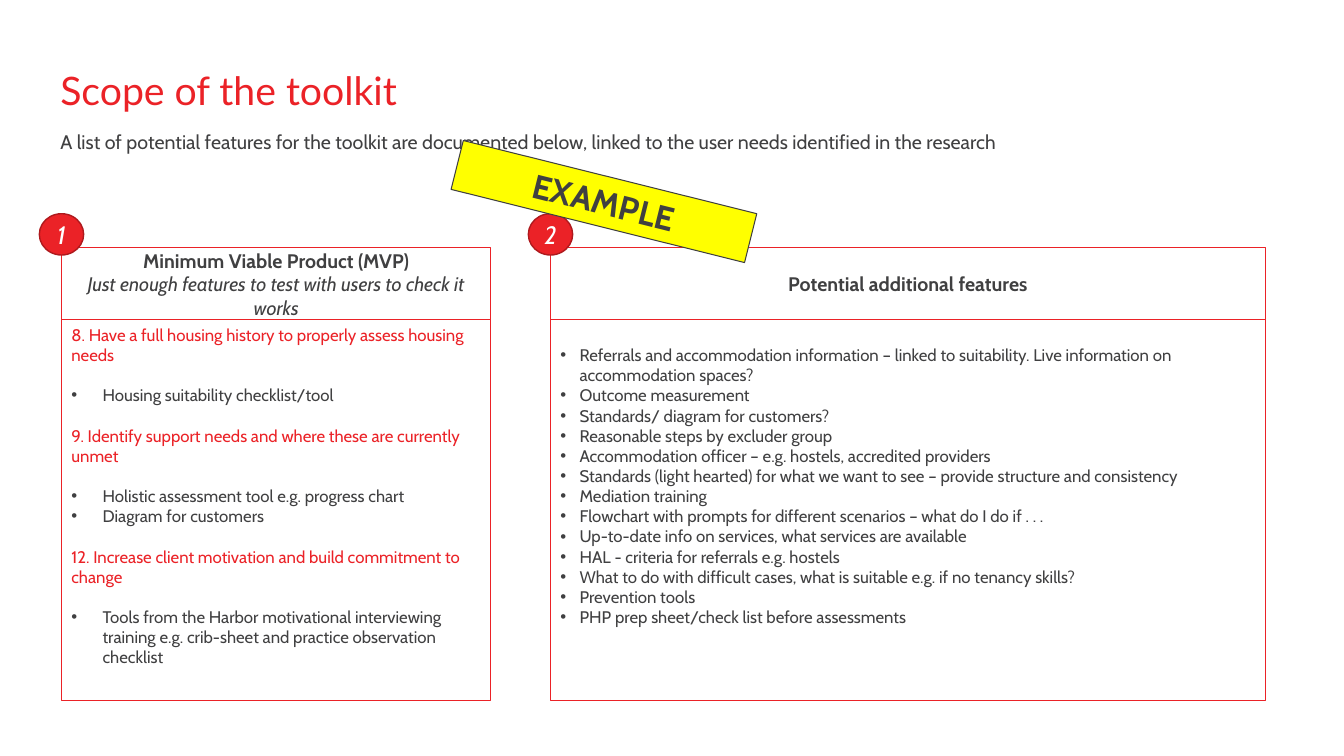
from lxml import etree
from pptx import Presentation
from pptx.dml.color import RGBColor
from pptx.enum import shapes, text
from pptx.oxml.ns import qn
from pptx.util import Inches, Pt

RED, DARK_RED, GREY, WHITE, YELLOW = "EB2227", "AE191D", "404041", "FFFFFF", "FFFF00"
TITLE = "Scope of the toolkit"
SUBTITLE = ("A list of potential features for the toolkit are documented below, "
            "linked to the user needs identified in the research")
STAMP = "EXAMPLE"
NEEDS = [
    ("8. Have a full housing history to properly assess housing needs",
     ["Housing suitability checklist/tool"]),
    ("9. Identify support needs and where these are currently unmet",
     ["Holistic assessment tool e.g. progress chart", "Diagram for customers"]),
    ("12. Increase client motivation and build commitment to change",
     ["Tools from the Harbor motivational interviewing training e.g. crib-sheet "
      "and practice observation checklist"]),
]
EXTRAS = [
    "Referrals and accommodation information – linked to suitability. Live information on accommodation spaces?",
    "Outcome measurement",
    "Standards/ diagram for customers?",
    "Reasonable steps by excluder group",
    "Accommodation officer – e.g. hostels, accredited providers",
    "Standards (light hearted) for what we want to see – provide structure and consistency",
    "Mediation training",
    "Flowchart with prompts for different scenarios – what do I do if . . . ",
    "Up-to-date info on services, what services are available",
    "HAL - criteria for referrals e.g. hostels",
    "What to do with difficult cases, what is suitable e.g. if no tenancy skills?",
    "Prevention tools",
    "PHP prep sheet/check list before assessments",
]
PANELS = [
    {"number": "1", "left": 0.61, "width": 4.26, "indent": 0.31, "groups": NEEDS,
     "heading": "Minimum Viable Product (MVP)",
     "note": "Just enough features to test with users to check it works"},
    {"number": "2", "left": 5.46, "width": 7.09, "indent": 0.19, "groups": [("", EXTRAS)],
     "heading": "Potential additional features", "note": ""},
]
HEAD_TOP, HEAD_HEIGHT, BODY_HEIGHT = 2.46, 0.71, 3.78
BADGE_SIZE = (0.44, 0.41)
BLANK_LINE = 14.4

prs = Presentation()
prs.slide_width, prs.slide_height = Inches(13.33), Inches(7.5)
s = prs.slides.add_slide(prs.slide_layouts[6])


def rgb(value):
    return RGBColor.from_string(value)


def add_run(p, words, size, color=GREY, bold=False, italic=False, font="Cabin"):
    r = p.add_run()
    r.text = words
    r.font.name, r.font.size, r.font.color.rgb = font, Pt(size), rgb(color)
    r.font.bold, r.font.italic = bold, italic


def next_paragraph(tf, align=text.PP_ALIGN.LEFT):
    p = tf.paragraphs[0] if not tf.paragraphs[0].runs else tf.add_paragraph()
    p.alignment = align
    return p


def add_centred(tf, words, size, **style):
    add_run(next_paragraph(tf, text.PP_ALIGN.CENTER), words, size, **style)


def add_bullet(p, indent):
    pPr = p._p.get_or_add_pPr()
    pPr.set("marL", str(Inches(indent)))
    pPr.set("indent", str(-Inches(indent)))
    etree.SubElement(pPr, qn("a:buFont")).set("typeface", "Arial")
    etree.SubElement(pPr, qn("a:buChar")).set("char", "•")


def add_box(kind, left, top, width, height, line, fill=None, weight=0.75):
    sp = s.shapes.add_shape(kind, Inches(left), Inches(top), Inches(width), Inches(height))
    sp.shadow.inherit = False
    sp.line.color.rgb, sp.line.width = rgb(line), Pt(weight)
    if fill:
        sp.fill.solid()
        sp.fill.fore_color.rgb = rgb(fill)
    else:
        sp.fill.background()
    sp.text_frame.word_wrap = True
    sp.text_frame.vertical_anchor = text.MSO_ANCHOR.MIDDLE
    return sp


def add_line_of_text(top, width, height, words, size, color, font):
    tf = s.shapes.add_textbox(Inches(0.5), Inches(top), Inches(width), Inches(height)).text_frame
    tf.word_wrap = True
    p = next_paragraph(tf)
    p.line_spacing = 0.9
    add_run(p, words, size, color, font=font)


def add_groups(tf, groups, indent):
    for g, (need, features) in enumerate(groups):
        if need:
            p = next_paragraph(tf)
            p.space_before = Pt(BLANK_LINE if g else 0)
            add_run(p, need, 12, RED)
        for f, feature in enumerate(features):
            p = next_paragraph(tf)
            p.space_before = Pt(BLANK_LINE if need and f == 0 else 0)
            add_bullet(p, indent)
            add_run(p, feature, 12)


def add_panel(panel):
    left, width = panel["left"], panel["width"]
    rect = shapes.MSO_SHAPE.RECTANGLE
    tf = add_box(rect, left, HEAD_TOP, width, HEAD_HEIGHT, RED).text_frame
    add_centred(tf, panel["heading"], 14, bold=True)
    if panel["note"]:
        add_centred(tf, panel["note"], 14, italic=True)

    badge = add_box(shapes.MSO_SHAPE.OVAL, left - BADGE_SIZE[0] / 2, 2.12, *BADGE_SIZE,
                    DARK_RED, RED, 1)
    badge.text_frame.margin_left = badge.text_frame.margin_right = 0
    add_centred(badge.text_frame, panel["number"], 18, color=WHITE, italic=True)

    tf = add_box(rect, left, HEAD_TOP + HEAD_HEIGHT, width, BODY_HEIGHT, RED).text_frame
    tf.vertical_anchor = text.MSO_ANCHOR.TOP
    if not panel["groups"][0][0]:
        tf.margin_top = Inches(0.25)
    add_groups(tf, panel["groups"], panel["indent"])


add_line_of_text(0.66, 12.69, 0.61, TITLE, 28, RED, "Lato")
add_line_of_text(1.27, 12.29, 0.92, SUBTITLE, 14, GREY, "Cabin")
for panel in PANELS:
    add_panel(panel)
stamp = add_box(shapes.MSO_SHAPE.RECTANGLE, 4.49, 1.75, 3, 0.5, GREY, YELLOW)
stamp.rotation = 14
add_centred(stamp.text_frame, STAMP, 24, bold=True)

prs.save("out.pptx")
